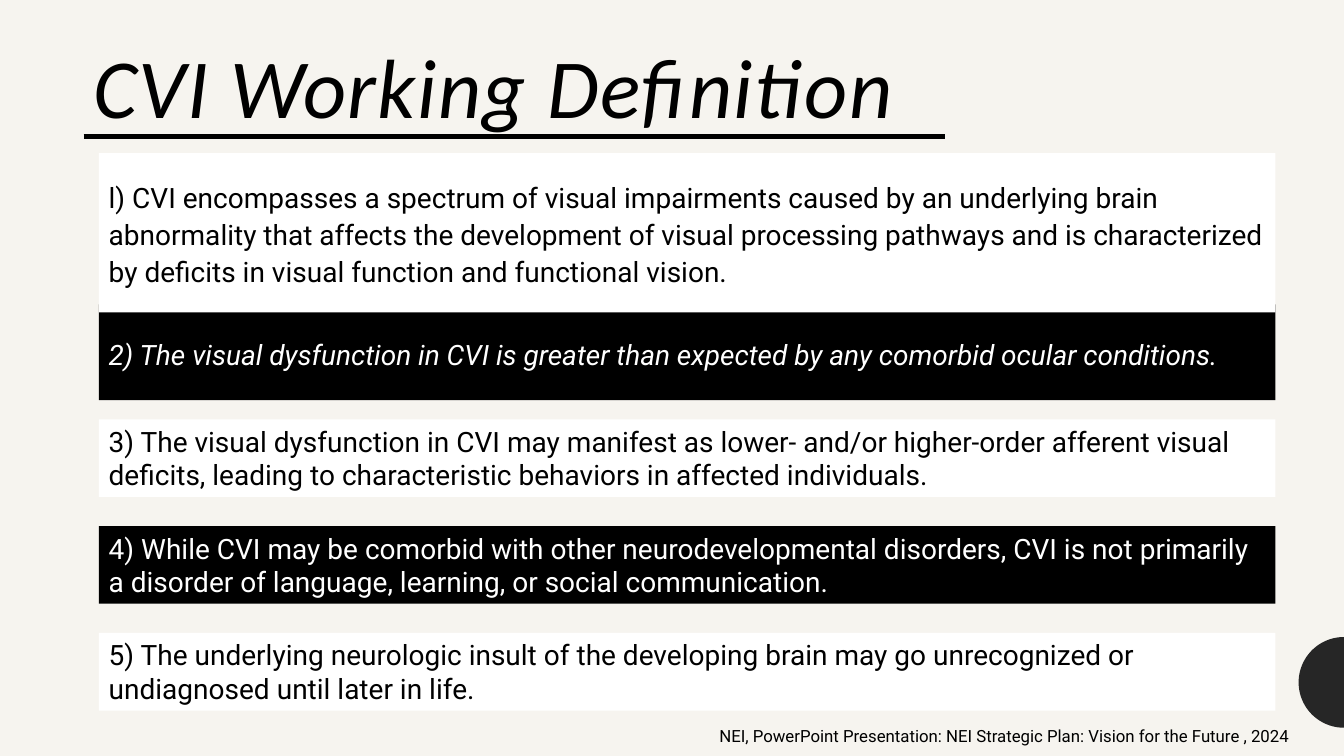
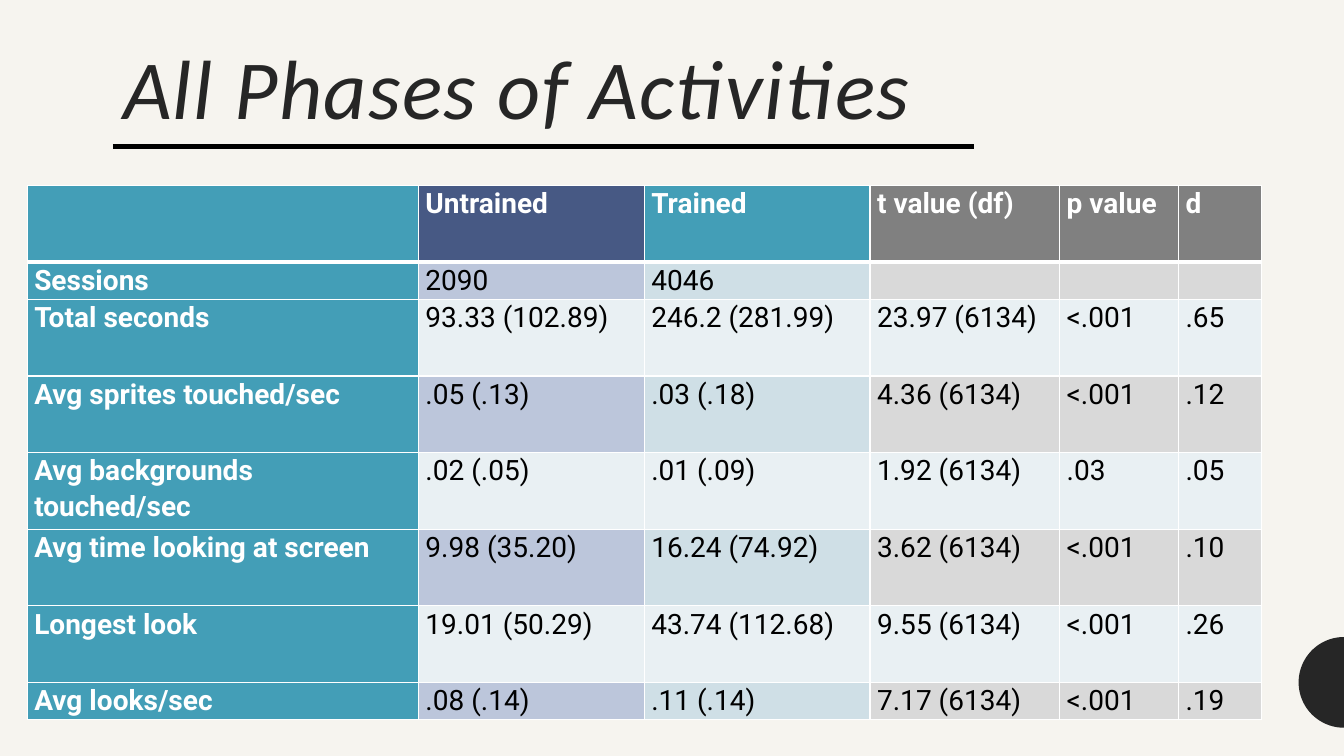
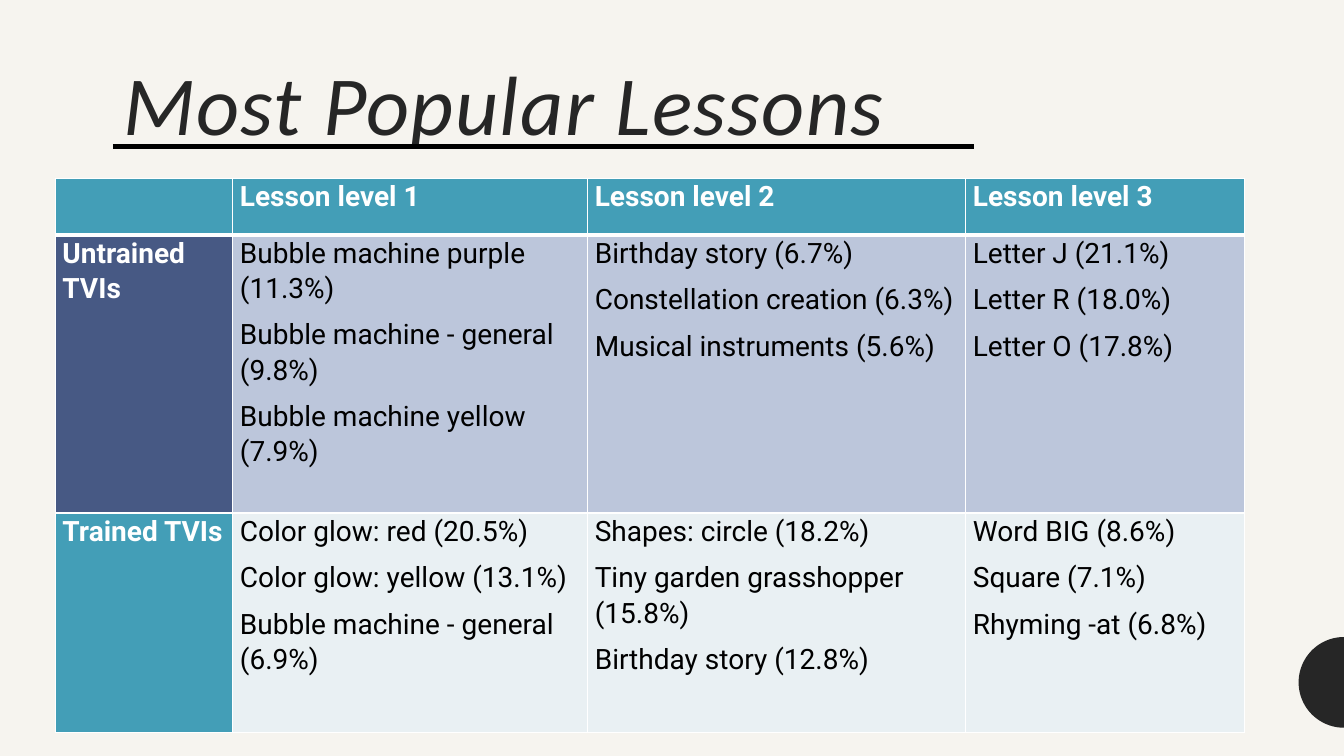
from math import cos, pi, sin

from lxml.etree import SubElement
from pptx import Presentation
from pptx.dml.color import RGBColor
from pptx.enum.shapes import MSO_CONNECTOR, MSO_SHAPE
from pptx.enum.text import MSO_ANCHOR, MSO_AUTO_SIZE, PP_ALIGN
from pptx.oxml import parse_xml
from pptx.oxml.ns import nsdecls, qn
from pptx.util import Inches, Pt

BLACK, WHITE, CREAM, DARK = "000000", "FFFFFF", "F6F4EF", "262626"
TEAL, NAVY, GRAY = "439EB7", "475984", "808080"
BLUE, AQUA, SILVER, PALE = "BCC6DB", "CFDFE6", "D9D9D9", "E9F0F3"

BODY = {"name": "Roboto", "size": Pt(20)}
BOLD = BODY | {"bold": True}
HEAD = {"name": "Calibri", "size": Pt(60), "italic": True}
LOOSE = {"line_spacing": 1.07, "space_after": Pt(8)}


def paint(part, hue):
    """Give a fill, or the fill of a line, one solid colour."""
    part.solid()
    part.fore_color.rgb = RGBColor.from_string(hue)


def write(frame, text, font, hue, para):
    """Put text in a frame, one paragraph a line, and format it."""
    frame.text = text
    for item in frame.paragraphs:
        for key, value in para.items():
            setattr(item, key, value)
        for run in item.runs:
            for key, value in font.items():
                setattr(run.font, key, value)
            paint(run.font.fill, hue)


deck = Presentation()
deck.slide_width, deck.slide_height = Inches(13.33), Inches(7.5)
layout = deck.slide_layouts[5]
paint(layout.background.fill, CREAM)

# Titles, each with a rule below
TIGHT = {"line_spacing": 0.9}
heads = [
    # text, left, top, colour, rule height, anchor, inset, paragraph format
    ("CVI Working Definition", 0.83, 0.41, BLACK, 1.35, MSO_ANCHOR.TOP, 0.05, TIGHT),
    ("All Phases of Activities", 1.12, 0.34, DARK, 1.45, MSO_ANCHOR.BOTTOM, 0.1, LOOSE),
    ("Most Popular Lessons", 1.12, 0.5, DARK, 1.45, MSO_ANCHOR.BOTTOM, 0.1, LOOSE),
]
slides = []
for text, left, top, hue, low, anchor, inset, para in heads:
    slide = deck.slides.add_slide(layout)
    slides.append(slide)
    title = slide.shapes.title
    title.left, title.top = Inches(left), Inches(top)
    title.width, title.height = Inches(11.67), Inches(1.11)
    frame = title.text_frame
    look = {"vertical_anchor": anchor, "auto_size": MSO_AUTO_SIZE.NONE,
            "word_wrap": True, "margin_left": Inches(0.1),
            "margin_top": Inches(inset), "margin_bottom": Inches(inset)}
    for key, value in look.items():
        setattr(frame, key, value)
    write(frame, text, HEAD, hue, para | {"alignment": PP_ALIGN.LEFT})
    frame.paragraphs[0].runs[0].font._element.set("spc", "100")

    rule = slide.shapes.add_connector(
        MSO_CONNECTOR.STRAIGHT, Inches(left), Inches(low),
        Inches(left + 8.54), Inches(low))
    paint(rule.line.fill, BLACK)
    rule.line.width = Pt(3.5)
    SubElement(rule._element.spPr, qn("a:effectLst"))

# Half disc at the right edge, shared through the layout
arc = [(Inches(13.33 - 0.45 * sin(pi * n / 48)),
        Inches(6.77 - 0.45 * cos(pi * n / 48))) for n in range(49)]
pen = slides[0].shapes.build_freeform(*arc[0], scale=1.0)
pen.add_line_segments(arc[1:], close=True)
disc = pen.convert_to_shape()
disc.shadow.inherit = False
paint(disc.fill, DARK)
disc.line.fill.background()
layout.shapes.element.append(disc._element)

# Slide 1: definition bars
WIDE = {"line_spacing": 1.1, "space_after": Pt(4)}
bars = [
    # top, height, fill, text colour, italic, anchor, paragraph format, text
    (3.02, 0.95, BLACK, WHITE, True, MSO_ANCHOR.MIDDLE, WIDE,
     "2) The visual dysfunction in CVI is greater than expected by any "
     "comorbid ocular conditions."),
    (1.52, 1.58, WHITE, BLACK, False, MSO_ANCHOR.MIDDLE, WIDE,
     "l) CVI encompasses a spectrum of visual impairments caused by an "
     "underlying brain abnormality that affects the development of visual "
     "processing pathways and is characterized by deficits in visual "
     "function and functional vision."),
    (4.16, 0.77, WHITE, BLACK, False, MSO_ANCHOR.TOP, {},
     "3) The visual dysfunction in CVI may manifest as lower- and/or "
     "higher-order afferent visual deficits, leading to characteristic "
     "behaviors in affected individuals."),
    (5.22, 0.77, BLACK, WHITE, False, MSO_ANCHOR.TOP, {},
     "4) While CVI may be comorbid with other neurodevelopmental disorders, "
     "CVI is not primarily a disorder of language, learning, or social "
     "communication."),
    (6.28, 0.77, WHITE, BLACK, False, MSO_ANCHOR.TOP, {},
     "5) The underlying neurologic insult of the developing brain may go "
     "unrecognized or undiagnosed until later in life."),
]
for top, high, fill, hue, slant, anchor, para, text in bars:
    bar = slides[0].shapes.add_shape(
        MSO_SHAPE.RECTANGLE, Inches(0.98), Inches(top), Inches(11.67), Inches(high))
    bar.shadow.inherit = False
    paint(bar.fill, fill)
    bar.line.fill.background()
    bar.text_frame.vertical_anchor = anchor
    write(bar.text_frame, text, BODY | {"italic": slant}, hue,
          para | {"alignment": PP_ALIGN.LEFT})

cite = slides[0].shapes.add_textbox(
    Inches(2.67), Inches(7.15), Inches(10.22), Inches(0.3))
cite.text_frame.word_wrap = True
write(cite.text_frame,
      "NEI, PowerPoint Presentation: NEI Strategic Plan: Vision for the Future , 2024",
      BODY | {"size": Pt(12)}, BLACK, {"alignment": PP_ALIGN.RIGHT})

# Slides 2 and 3: tables, with the fills of each row
phases = [
    ["", "Untrained", "Trained", "t value (df)", "p value", "d"],
    ["Sessions", "2090", "4046", "", "", ""],
    ["Total seconds", "93.33 (102.89)", "246.2 (281.99)", "23.97 (6134)", "<.001", ".65"],
    ["Avg sprites touched/sec", ".05 (.13)", ".03 (.18)", "4.36 (6134)", "<.001", ".12"],
    ["Avg backgrounds touched/sec", ".02 (.05)", ".01 (.09)", "1.92 (6134)", ".03", ".05"],
    ["Avg time looking at screen", "9.98 (35.20)", "16.24 (74.92)", "3.62 (6134)", "<.001", ".10"],
    ["Longest look", "19.01 (50.29)", "43.74 (112.68)", "9.55 (6134)", "<.001", ".26"],
    ["Avg looks/sec", ".08 (.14)", ".11 (.14)", "7.17 (6134)", "<.001", ".19"],
]
lessons = [
    ["", "Lesson level 1", "Lesson level 2", "Lesson level 3"],
    ["Untrained TVIs",
     "Bubble machine purple (11.3%)\nBubble machine - general (9.8%)\n"
     "Bubble machine yellow (7.9%)",
     "Birthday story (6.7%)\nConstellation creation (6.3%)\n"
     "Musical instruments (5.6%)",
     "Letter J (21.1%)\nLetter R (18.0%)\nLetter O (17.8%)"],
    ["Trained TVIs",
     "Color glow: red (20.5%)\nColor glow: yellow (13.1%)\n"
     "Bubble machine - general (6.9%)",
     "Shapes: circle (18.2%)\nTiny garden grasshopper (15.8%)\n"
     "Birthday story (12.8%)",
     "Word BIG (8.6%)\nSquare (7.1%)\nRhyming -at (6.8%)"],
]
band = [TEAL, BLUE, AQUA] + [SILVER] * 3
plain = [TEAL] + [PALE] * 5
grids = [
    # slide, left, top, column widths, row heights, cells, fills
    (slides[1], 0.27, 1.84, [3.88, 2.24, 2.24, 1.88, 1.18, 0.82],
     [0.76, 0.37] + [0.76] * 5 + [0.37], phases,
     [[TEAL, NAVY, TEAL] + [GRAY] * 3] + [band, plain] * 3 + [band]),
    (slides[2], 0.55, 1.77, [1.76, 3.52, 3.75, 2.76], [0.56, 2.76, 2.18], lessons,
     [[TEAL] * 4, [NAVY] + [BLUE] * 3, [TEAL] + [PALE] * 3]),
]
inset = {"margin_left": Inches(0.07), "margin_right": Inches(0.07),
         "margin_top": 0, "margin_bottom": 0}
for slide, left, top, wide, high, cells, fills in grids:
    grid = slide.shapes.add_table(
        len(high), len(wide), Inches(left), Inches(top),
        Inches(sum(wide)), Inches(sum(high))).table
    grid.horz_banding = False
    for col, size in zip(grid.columns, wide):
        col.width = Inches(size)
    for y, row in enumerate(grid.rows):
        row.height = Inches(high[y])
        for x, cell in enumerate(row.cells):
            for key, value in inset.items():
                setattr(cell, key, value)
            lead = x == 0 or y == 0
            write(cell.text_frame, cells[y][x], BOLD if lead else BODY,
                  WHITE if lead else BLACK, LOOSE)
            paint(cell.fill, fills[y][x])
            edges = {"L": 1, "R": 1, "T": 3 if y == 1 else 1, "B": 3 if y == 0 else 1}
            for n, (side, size) in enumerate(edges.items()):
                cell._tc.tcPr.insert(n, parse_xml(
                    f'<a:ln{side} {nsdecls("a")} w="{Pt(size)}"><a:solidFill>'
                    f'<a:srgbClr val="{WHITE}"/></a:solidFill></a:ln{side}>'))

deck.save("out.pptx")
